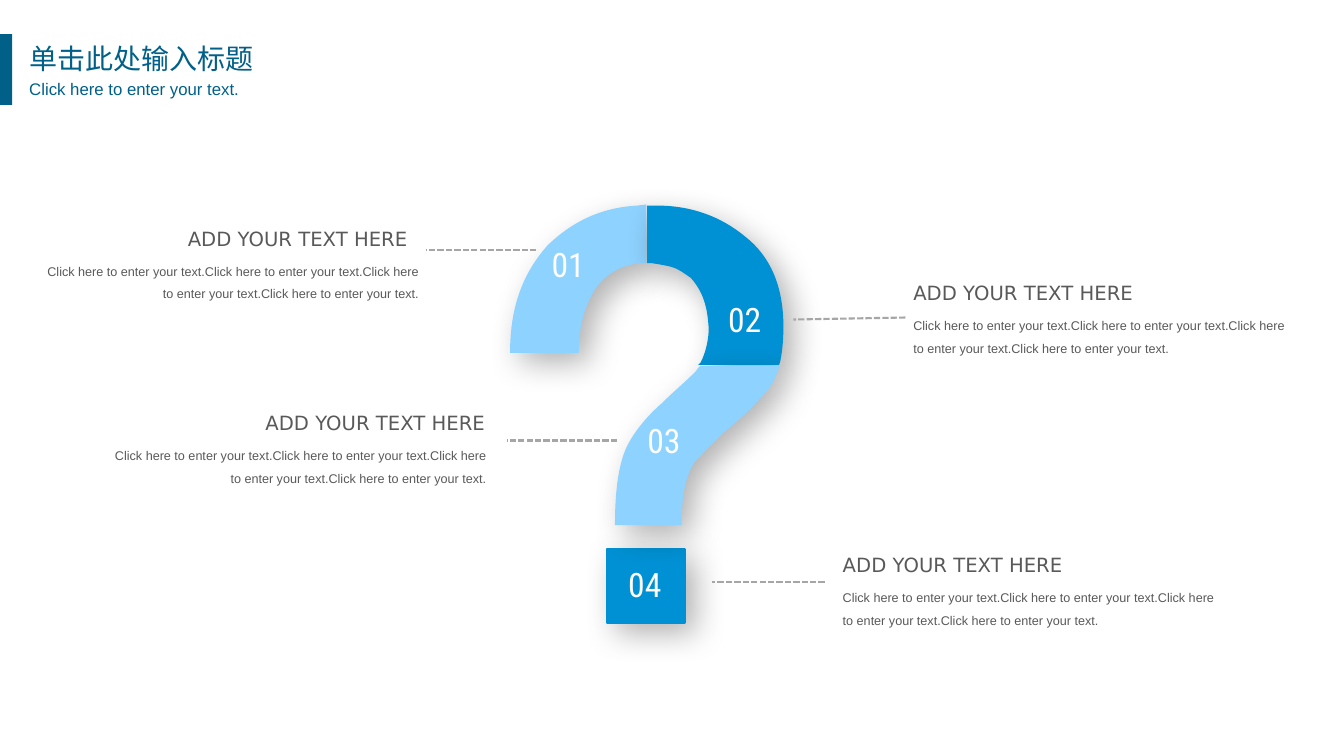
from dataclasses import dataclass

from lxml import etree
from pptx import Presentation
from pptx.dml.color import RGBColor
from pptx.enum.dml import MSO_LINE
from pptx.enum.shapes import MSO_CONNECTOR, MSO_SHAPE
from pptx.enum.text import PP_ALIGN
from pptx.oxml import parse_xml
from pptx.oxml.ns import nsdecls, qn
from pptx.util import Inches, Pt

LEFT, RIGHT, CENTER, JUSTIFY = PP_ALIGN.LEFT, PP_ALIGN.RIGHT, PP_ALIGN.CENTER, PP_ALIGN.JUSTIFY
RECTANGLE, STRAIGHT, SHORT_DASH = MSO_SHAPE.RECTANGLE, MSO_CONNECTOR.STRAIGHT, MSO_LINE.SQUARE_DOT


@dataclass(frozen=True)
class TextStyle:
    """Font, size and colour of one level of text."""
    font: str
    size: float
    color: str


@dataclass(frozen=True)
class Theme:
    """Colours and text styles of the slide."""
    navy: str = "006088"
    blue: str = "0091D4"
    sky: str = "8ED2FF"
    leader: str = "A6A6A6"
    stroke: float = 1.5
    title: TextStyle = TextStyle("Noto Sans CJK SC", 20, "006088")
    subtitle: TextStyle = TextStyle("Arial", 12, "006088")
    number: TextStyle = TextStyle("Roboto Condensed", 24, "FFFFFF")
    heading: TextStyle = TextStyle("DejaVu Sans", 14, "595959")
    body: TextStyle = TextStyle("Arial", 9, "595959")


THEME = Theme()
PROMPT = "Click here to enter your text."

HOOK_LEFT = [
    (6.4, 2.04), (6.4, 2.6), (6.35, 2.6),
    (6.16, 2.62, 6.02, 2.7, 5.91, 2.84), (5.8, 3, 5.73, 3.22, 5.73, 3.49),
    (5.07, 3.49), (5.07, 3.04, 5.2, 2.71, 5.44, 2.44),
    (5.68, 2.21, 5.96, 2.07, 6.32, 2.05),
]
HOOK_RIGHT = [
    (6.51, 2.05), (6.86, 2.05, 7.15, 2.16, 7.39, 2.36),
    (7.63, 2.55, 7.76, 2.84, 7.76, 3.24), (7.76, 3.37, 7.75, 3.48, 7.73, 3.58),
    (7.72, 3.61), (6.95, 3.61), (6.96, 3.6),
    (7.01, 3.5, 7.04, 3.37, 7.04, 3.26), (7.03, 3.1, 7.01, 2.92, 6.86, 2.75),
    (6.7, 2.64, 6.71, 2.64, 6.46, 2.6), (6.43, 2.6), (6.43, 2.05),
]
STEM = [
    (6.95, 3.64), (7.72, 3.64), (7.68, 3.74),
    (7.66, 3.79, 7.64, 3.82, 7.61, 3.86), (7.5, 3.99, 7.39, 4.1, 7.26, 4.21),
    (7.1, 4.34, 6.99, 4.47, 6.88, 4.58), (6.79, 4.72, 6.75, 4.91, 6.75, 5.2),
    (6.11, 5.2), (6.11, 4.85, 6.15, 4.61, 6.22, 4.45),
    (6.29, 4.3, 6.42, 4.14, 6.57, 4.01), (6.68, 3.9, 6.79, 3.81, 6.9, 3.7),
    (6.91, 3.69, 6.92, 3.68, 6.93, 3.66),
]
NUMBERS = [("01", 5.26, 2.37), ("02", 7.01, 2.92), ("03", 6.21, 4.12), ("04", 6.02, 5.55)]
LEFT_LEADERS = [(5.32, 2.48, 4.23, 2.48), (6.12, 4.37, 5.03, 4.37)]
RIGHT_LEADERS = [(8.98, 3.15, 7.87, 3.17), (8.18, 5.77, 7.06, 5.77)]
CALLOUTS = [
    (8.96, 8.96, 2.74, LEFT), (8.26, 8.26, 5.44, LEFT),
    (1.76, 1.04, 4.03, RIGHT), (0.99, 0.37, 2.2, RIGHT),
]


def add_text(slide, text, box, style, align=LEFT, spacing=None, before=None, inset=None):
    """Add a wrapped one-paragraph text box."""
    frame = slide.shapes.add_textbox(*map(Inches, box)).text_frame
    frame.word_wrap = True
    if inset is not None:
        frame.margin_left = frame.margin_right = Inches(inset)
        frame.margin_top = frame.margin_bottom = Inches(inset)
    paragraph = frame.paragraphs[0]
    paragraph.text = text
    paragraph.alignment = align
    if spacing:
        paragraph.line_spacing = spacing
    if before:
        paragraph.space_before = Pt(before)
    font = paragraph.font
    font.size = Pt(style.size)
    font.color.rgb = RGBColor.from_string(style.color)
    font.name = style.font
    defaults = paragraph._p.get_or_add_pPr().find(qn("a:defRPr"))
    etree.SubElement(defaults, qn("a:ea"), typeface=style.font)


def paint(shape, color):
    """Fill a shape and remove its outline and inherited shadow."""
    shape.shadow.inherit = False
    shape.fill.solid()
    shape.fill.fore_color.rgb = RGBColor.from_string(color)
    shape.line.fill.background()


def raise_piece(shape, color):
    """Give a question mark piece its fill, outline and soft shadow."""
    paint(shape, color)
    shape.line.color.rgb = RGBColor.from_string(color)
    shape.line.width = Pt(THEME.stroke)
    effects = shape._element.spPr.find(qn("a:effectLst"))
    effects.append(parse_xml(
        f'<a:outerShdw {nsdecls("a")} blurRad="{Pt(23)}" dist="{Pt(10)}" dir="{45 * 60000}" '
        'algn="tl" rotWithShape="0"><a:srgbClr val="000000"><a:alpha val="30000"/>'
        '</a:srgbClr></a:outerShdw>'))


def bend(piece, outline):
    """Turn the straight segments that have control points into cubic curves."""
    straight_segments = list(piece._element.iter(qn("a:lnTo")))
    for straight, segment in zip(straight_segments, outline[1:]):
        if len(segment) == 2:
            continue
        curve = etree.Element(qn("a:cubicBezTo"))
        for x, y in zip(segment[::2], segment[1::2]):
            etree.SubElement(curve, qn("a:pt"), x=str(Inches(x) - piece.left),
                             y=str(Inches(y) - piece.top))
        straight.getparent().replace(straight, curve)


def add_curved_piece(slide, outline, color):
    """Draw one curved piece of the question mark with sharp corners."""
    corners = [tuple(map(Inches, segment[-2:])) for segment in outline]
    builder = slide.shapes.build_freeform(*corners[0])
    builder.add_line_segments(corners[1:], close=True)
    piece = builder.convert_to_shape()
    bend(piece, outline)
    raise_piece(piece, color)
    outline_format = piece._element.spPr.find(qn("a:ln"))
    etree.SubElement(outline_format, qn("a:miter"), lim="800000")


def add_leaders(slide, leaders):
    """Draw the grouped dashed lines of one side."""
    group = slide.shapes.add_group_shape()
    for ends in leaders:
        leader = group.shapes.add_connector(STRAIGHT, *map(Inches, ends))
        leader.line.color.rgb = RGBColor.from_string(THEME.leader)
        leader.line.width = Pt(THEME.stroke)
        leader.line.dash_style = SHORT_DASH
        etree.SubElement(leader._element.spPr, qn("a:effectLst"))


def add_callout(slide, heading_left, body_left, top, align):
    """Add a heading with its explanatory text below."""
    add_text(slide, "ADD YOUR TEXT HERE", (heading_left, top, 3.15, 0.34), THEME.heading, align)
    add_text(slide, PROMPT * 4, (body_left, top + 0.29, 3.88, 0.55), THEME.body, align, spacing=1.5)


def add_header(slide):
    """Add the title, subtitle and accent bar."""
    add_text(slide, "单击此处输入标题", (0.19, 0.36, 2.59, 0.46), THEME.title)
    add_text(slide, PROMPT, (0.25, 0.7, 2.47, 0.32), THEME.subtitle, JUSTIFY,
             spacing=1.2, before=2.4, inset=0.04)
    accent = slide.shapes.add_shape(RECTANGLE, *map(Inches, (0, 0.34, 0.12, 0.7)))
    paint(accent, THEME.navy)


def main():
    """Build the question mark slide."""
    presentation = Presentation()
    presentation.slide_width, presentation.slide_height = Inches(13.33), Inches(7.5)
    slide = presentation.slides.add_slide(presentation.slide_layouts[6])
    add_header(slide)
    dot = slide.shapes.add_shape(RECTANGLE, *map(Inches, (6.02, 5.45, 0.77, 0.73)))
    raise_piece(dot, THEME.blue)
    for outline, color in ((HOOK_LEFT, THEME.sky), (HOOK_RIGHT, THEME.blue), (STEM, THEME.sky)):
        add_curved_piece(slide, outline, color)
    for number, left, top in NUMBERS:
        add_text(slide, number, (left, top, 0.75, 0.5), THEME.number, CENTER)
    for leaders in (LEFT_LEADERS, RIGHT_LEADERS):
        add_leaders(slide, leaders)
    for callout in CALLOUTS:
        add_callout(slide, *callout)
    presentation.save("out.pptx")


if __name__ == "__main__":
    main()
